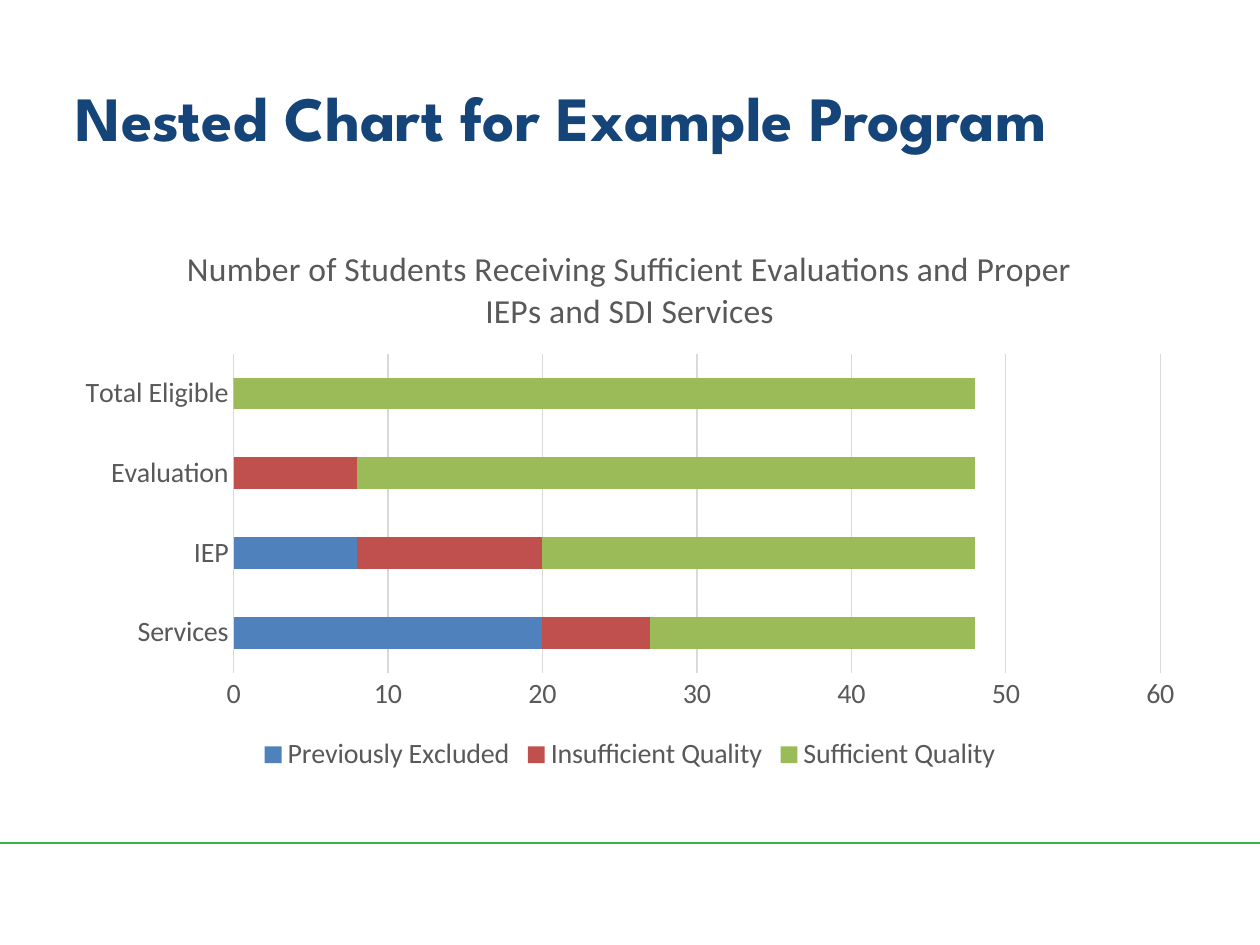
from pptx import Presentation
from pptx.chart.data import CategoryChartData
from pptx.dml.color import RGBColor
from pptx.enum.chart import XL_CHART_TYPE, XL_LEGEND_POSITION, XL_TICK_MARK
from pptx.enum.shapes import MSO_CONNECTOR
from pptx.enum.text import MSO_ANCHOR, PP_ALIGN
from pptx.util import Inches, Pt
from lxml import etree

STACKED_BAR = XL_CHART_TYPE.BAR_STACKED
BOTTOM = XL_LEGEND_POSITION.BOTTOM
NO_TICK = XL_TICK_MARK.NONE
STRAIGHT = MSO_CONNECTOR.STRAIGHT
MIDDLE = MSO_ANCHOR.MIDDLE
LEFT = PP_ALIGN.LEFT

GRAY, PALE = "595959", "D9D9D9"
DRAWING = "http://schemas.openxmlformats.org/drawingml/2006/main"


def color(hex_string):
    return RGBColor.from_string(hex_string)


def write(frame, text, size=16, font="Calibri", fill=GRAY, bold=False, align=None):
    para = frame.paragraphs[0]
    para.alignment = align
    span = para.add_run()
    span.text = text
    span.font.size = Pt(size)
    span.font.name = font
    span.font.bold = bold
    span.font.color.rgb = color(fill)


deck = Presentation()
deck.slide_width, deck.slide_height = Inches(10), Inches(7.5)
page = deck.slides.add_slide(deck.slide_layouts[5])

# Footer rule
rule = page.shapes.add_connector(STRAIGHT, 0, Inches(6.69), Inches(10), Inches(6.69))
rule.line.color.rgb = color("39B54A")
rule.line.width = Pt(1.5)
etree.SubElement(rule._element.spPr, f"{{{DRAWING}}}effectLst")

# Title
title = page.shapes.title
title.left, title.top = Inches(0.5), Inches(0.3)
title.width, title.height = Inches(9), Inches(1.25)
title.text_frame.vertical_anchor = MIDDLE
write(title.text_frame, "Nested Chart for Example Program", size=36,
      font="League Spartan", fill="154578", bold=True, align=LEFT)

# Chart data
series_rows = [
    ("Previously Excluded", (20, 8, 0, 0), "4F81BD"),
    ("Insufficient Quality", (7, 12, 8, 0), "C0504D"),
    ("Sufficient Quality", (21, 28, 40, 48), "9BBB59"),
]
data = CategoryChartData()
data.categories = ["Services", "IEP", "Evaluation", "Total Eligible"]
for name, values, _ in series_rows:
    data.add_series(name, values)

# Stacked bars
chart = page.shapes.add_chart(STACKED_BAR, Inches(0.5), Inches(1.75),
                              Inches(9), Inches(4.42), data).chart
chart.font.size = Pt(16)
chart.font.name = "Calibri"
plot = chart.plots[0]
plot.gap_width, plot.overlap = 150, 100
plot.vary_by_categories = False
for series, (_, _, fill) in zip(plot.series, series_rows):
    series.format.fill.solid()
    series.format.fill.fore_color.rgb = color(fill)

# Chart title and legend
chart.has_title = True
chart.chart_title.include_in_layout = False
write(chart.chart_title.text_frame,
      "Number of Students Receiving Sufficient Evaluations and Proper IEPs and SDI Services",
      size=19.2)
chart.has_legend = True
chart.legend.position = BOTTOM
chart.legend.include_in_layout = False

# Axes
category_axis, value_axis = chart.category_axis, chart.value_axis
for axis in (category_axis, value_axis):
    axis.major_tick_mark = axis.minor_tick_mark = NO_TICK
value_axis.has_major_gridlines = True
value_axis.format.line.fill.background()
for line in (category_axis.format.line, value_axis.major_gridlines.format.line):
    line.color.rgb = color(PALE)
    line.width = Pt(0.75)
for font in (category_axis.tick_labels.font, value_axis.tick_labels.font, chart.legend.font):
    font.size = Pt(16)
    font.name = "Calibri"
    font.color.rgb = color(GRAY)

deck.save("out.pptx")
